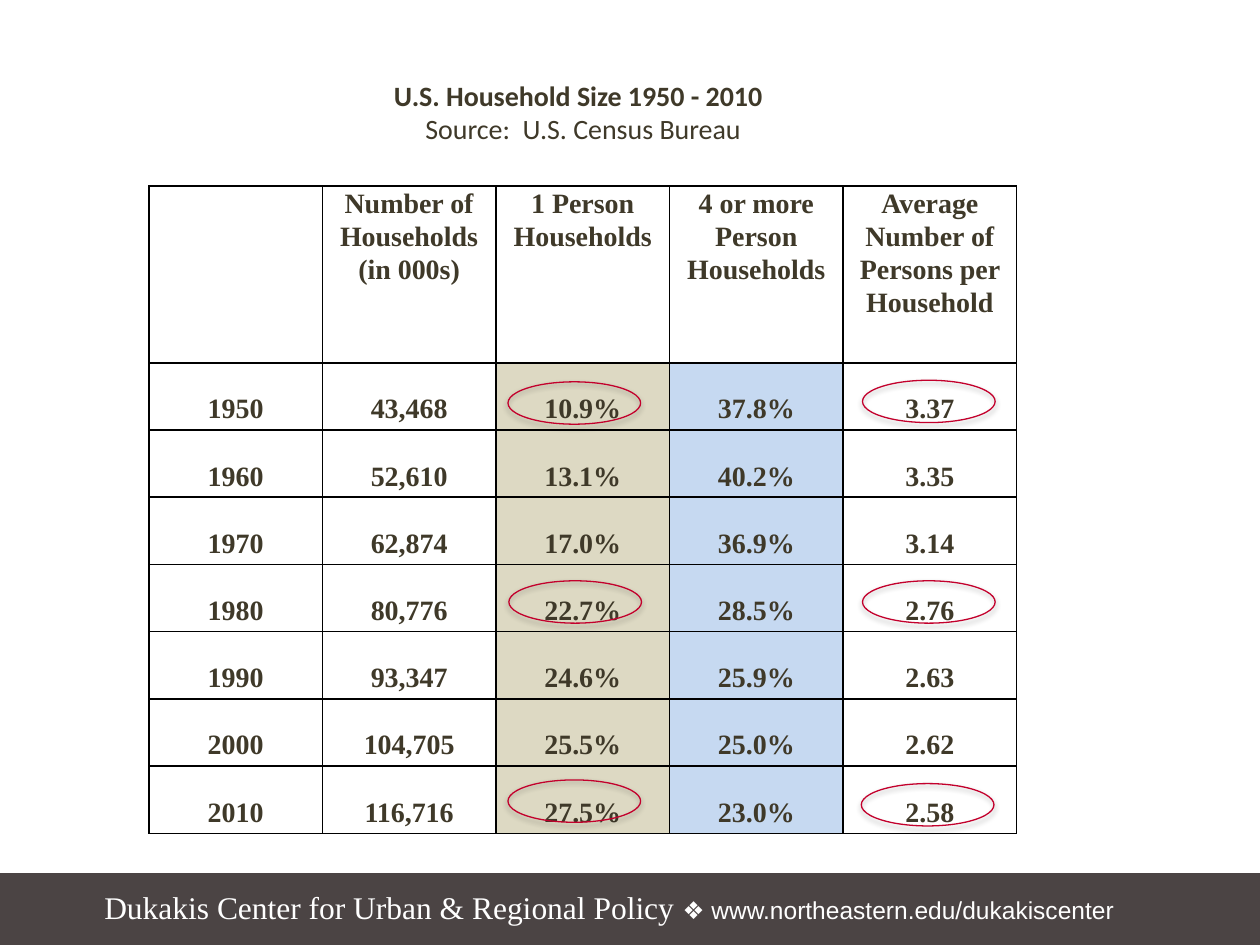
from lxml import etree
from pptx import Presentation
from pptx import util as u
from pptx.dml.color import RGBColor
from pptx.enum import shapes, text
from pptx.oxml import parse_xml
from pptx.oxml.ns import nsdecls, qn

INK = "3F3929"
WHITE = "FFFFFF"
SERIF = "Times New Roman"


def color(value):
    return RGBColor.from_string(value)


def add_run(paragraph, words, size, font, ink, bold=False):
    run = paragraph.add_run()
    run.text = words
    run.font.size = u.Pt(size)
    run.font.name = font
    run.font.bold = bold
    run.font.color.rgb = color(ink)


presentation = Presentation()
presentation.slide_width = u.Pt(720)
presentation.slide_height = u.Pt(540)
slide = presentation.slides.add_slide(presentation.slide_layouts[6])

# Footer bar
bar = slide.shapes.add_shape(shapes.MSO_SHAPE.RECTANGLE,
                             u.Pt(-1), u.Pt(499.5), u.Pt(723), u.Pt(42))
bar.shadow.inherit = False
bar.fill.solid()
bar.fill.fore_color.rgb = color("4B4444")
bar.line.color.rgb = color("4B4444")
bar.line.width = u.Pt(0.75)

# Footer text
footer = slide.shapes.add_textbox(u.Pt(52.5), u.Pt(504), u.Pt(614), u.Pt(29))
footer.text_frame.word_wrap = True
paragraph = footer.text_frame.paragraphs[0]
add_run(paragraph, "Dukakis Center for Urban & Regional Policy ", 18, SERIF, WHITE)
add_run(paragraph, "❖ www.northeastern.edu/dukakiscenter", 14, "Arial", WHITE)

# Household table: each cell is a list of paragraphs
header = [
    [],
    ["Number of Households", "(in 000s)"],
    ["1 Person", "Households"],
    ["4 or more Person Households"],
    ["Average Number of Persons per Household"],
]
households = [
    ("1950", "43,468", "10.9%", "37.8%", "3.37"),
    ("1960", "52,610", "13.1%", "40.2%", "3.35"),
    ("1970", "62,874", "17.0%", "36.9%", "3.14"),
    ("1980", "80,776", "22.7%", "28.5%", "2.76"),
    ("1990", "93,347", "24.6%", "25.9%", "2.63"),
    ("2000", "104,705", "25.5%", "25.0%", "2.62"),
    ("2010", "116,716", "27.5%", "23.0%", "2.58"),
]
rows = [header] + [[[value] for value in row] for row in households]
column_fills = {2: "DDD9C3", 3: "C6D9F1"}
header_height, row_height, column_width = 101, 38.43, 99.2

table = slide.shapes.add_table(
    len(rows), len(header), u.Pt(85), u.Pt(106.3),
    u.Pt(column_width * len(header)),
    u.Pt(header_height + row_height * len(households))).table
for column in table.columns:
    column.width = u.Pt(column_width)

for row_index, row in enumerate(rows):
    is_header = row_index == 0
    table.rows[row_index].height = u.Pt(header_height if is_header else row_height)
    for column_index, lines in enumerate(row):
        cell = table.cell(row_index, column_index)
        cell.margin_left = cell.margin_right = u.Pt(5)
        cell.margin_top = cell.margin_bottom = u.Pt(0)
        # Black borders on all four sides
        properties = cell._tc.get_or_add_tcPr()
        for side in ("lnL", "lnR", "lnT", "lnB"):
            properties.append(parse_xml(
                f'<a:{side} {nsdecls("a")} w="12700"><a:solidFill>'
                f'<a:srgbClr val="000000"/></a:solidFill></a:{side}>'))
        if not is_header and column_index in column_fills:
            cell.fill.solid()
            cell.fill.fore_color.rgb = color(column_fills[column_index])
        else:
            cell.fill.background()
        frame = cell.text_frame
        for line_index, line in enumerate(lines):
            paragraph = frame.add_paragraph() if line_index else frame.paragraphs[0]
            paragraph.alignment = text.PP_ALIGN.CENTER
            paragraph.line_spacing = 1.07 if is_header else 2.0
            add_run(paragraph, line, 16, SERIF, INK, bold=True)

# Title and source
title = slide.shapes.add_textbox(u.Pt(218), u.Pt(41), u.Pt(245), u.Pt(46))
title.text_frame.word_wrap = True
title.text_frame.vertical_anchor = text.MSO_ANCHOR.MIDDLE
add_run(title.text_frame.paragraphs[0], "U.S. Household Size 1950 - 2010",
        16, "Calibri", INK, bold=True)
source = title.text_frame.add_paragraph()
source._p.get_or_add_pPr().set("marL", str(u.Pt(18)))
add_run(source, "Source:  U.S. Census Bureau", 16, "Calibri", INK)

# Rings around the key values
rings = [(290.3, 218.2), (290.8, 331.9), (290.3, 445.7),
         (492.9, 217.3), (492.9, 331.9), (492.2, 447.8)]
for left, top in rings:
    ring = slide.shapes.add_shape(shapes.MSO_SHAPE.OVAL,
                                  u.Pt(left), u.Pt(top), u.Pt(75.8), u.Pt(24.2))
    ring.fill.background()
    ring.line.color.rgb = color("C3002C")
    ring.line.width = u.Pt(0.75)
    # Soft shadow straight below
    ring.shadow.inherit = False
    effects = ring._element.spPr.find(qn("a:effectLst"))
    shadow = etree.SubElement(effects, qn("a:outerShdw"), blurRad=str(u.Pt(3.1)),
                              dist=str(u.Pt(1.8)), dir="5400000", rotWithShape="0")
    shade = etree.SubElement(shadow, qn("a:srgbClr"), val="000000")
    etree.SubElement(shade, qn("a:alpha"), val="35000")

presentation.save("out.pptx")
